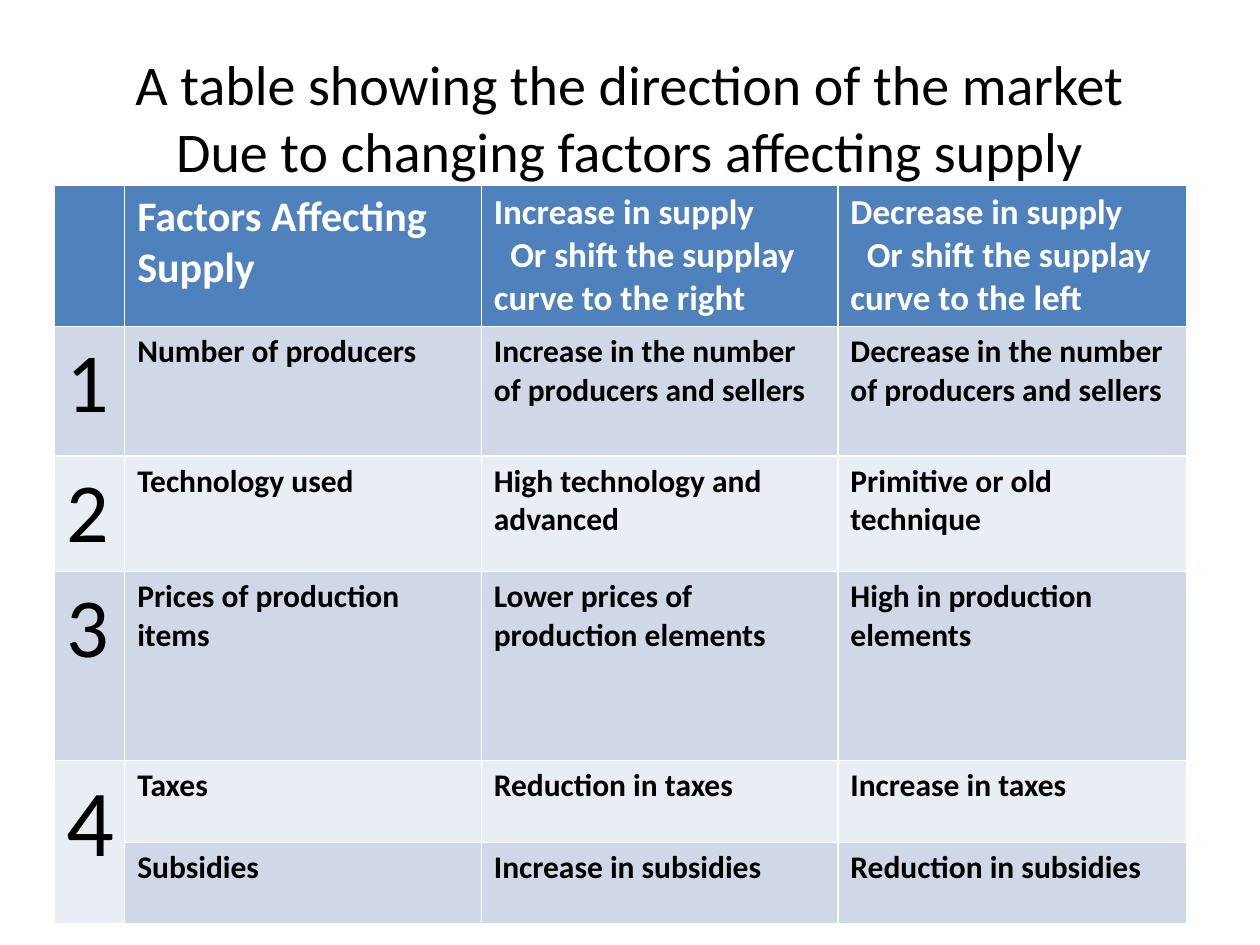
from pptx import Presentation
from pptx.dml.color import RGBColor
from pptx.enum.text import MSO_ANCHOR, PP_ALIGN
from pptx.util import Inches, Pt

WHITE = RGBColor(0xFF, 0xFF, 0xFF)
BLACK = RGBColor(0x00, 0x00, 0x00)
HEADER = RGBColor(0x4F, 0x81, 0xBD)
BANDS = [RGBColor(0xE9, 0xED, 0xF4), RGBColor(0xD0, 0xD8, 0xE8)]

COLS = [0.56, 2.83, 2.83, 2.77]
ROWS = [1.1, 1.03, 0.9, 1.5, 0.65, 0.65]
TITLE = "A table showing the direction of the market\vDue to changing factors affecting supply"
CONTENT = [
    ["", "Factors Affecting Supply",
     "Increase in supply\nOr shift the supplay curve to the right",
     "Decrease in supply\nOr shift the supplay curve to the left"],
    ["1", "Number of producers", "Increase in the number of producers and sellers",
     "Decrease in the number of producers and sellers"],
    ["2", "Technology used", "High technology and advanced", "Primitive or old technique"],
    ["3", "Prices of production items", "Lower prices of production elements",
     "High in production elements"],
    ["4", "Taxes", "Reduction in taxes", "Increase in taxes"],
    ["", "Subsidies", "Increase in subsidies", "Reduction in subsidies"],
]


def set_font(p, color, **values):
    p.font.color.rgb = color
    for name, value in {"name": "Calibri", **values}.items():
        setattr(p.font, name, value)


def cell_font(row, col):
    if row == 0:
        return {"color": WHITE, "size": Pt(24 if col < 2 else 20), "bold": True}
    if col == 0:
        return {"color": BLACK, "size": Pt(54 if row == 4 else 48), "bold": False}
    return {"color": BLACK, "size": Pt(18), "bold": True}


def add_title(s, left, top, width, height):
    sp = s.shapes.title
    box = {"left": left, "top": top, "width": width, "height": height}
    for name, value in box.items():
        setattr(sp, name, Inches(value))
    tf = sp.text_frame
    tf.text = TITLE
    tf.vertical_anchor = MSO_ANCHOR.MIDDLE
    p = tf.paragraphs[0]
    p.alignment = PP_ALIGN.CENTER
    set_font(p, BLACK, size=Pt(32))


def add_supply_table(s, left, top, width, height):
    table = s.shapes.add_table(len(ROWS), len(COLS), Inches(left), Inches(top),
                               Inches(width), Inches(height)).table
    for column, share in zip(table.columns, COLS):
        column.width = Inches(width * share / sum(COLS))
    for row, share in zip(table.rows, ROWS):
        row.height = Inches(height * share / sum(ROWS))
    for r, texts in enumerate(CONTENT):
        for c, text in enumerate(texts):
            cell = table.cell(r, c)
            cell.fill.solid()
            cell.fill.fore_color.rgb = BANDS[r % 2] if r else HEADER
            if not text:
                continue
            cell.text = text
            for i, p in enumerate(cell.text_frame.paragraphs):
                if i:
                    p._p.get_or_add_pPr().set("indent", str(Inches(0.13)))
                set_font(p, **cell_font(r, c))
    table.cell(4, 0).merge(table.cell(5, 0))


def main():
    prs = Presentation()
    prs.slide_width, prs.slide_height = Inches(10), Inches(7.5)
    s = prs.slides.add_slide(prs.slide_layouts[5])
    add_title(s, 0.5, 0.3, 9, 1.25)
    add_supply_table(s, 0.43, 1.47, sum(COLS), sum(ROWS))
    prs.save("out.pptx")


if __name__ == "__main__":
    main()
